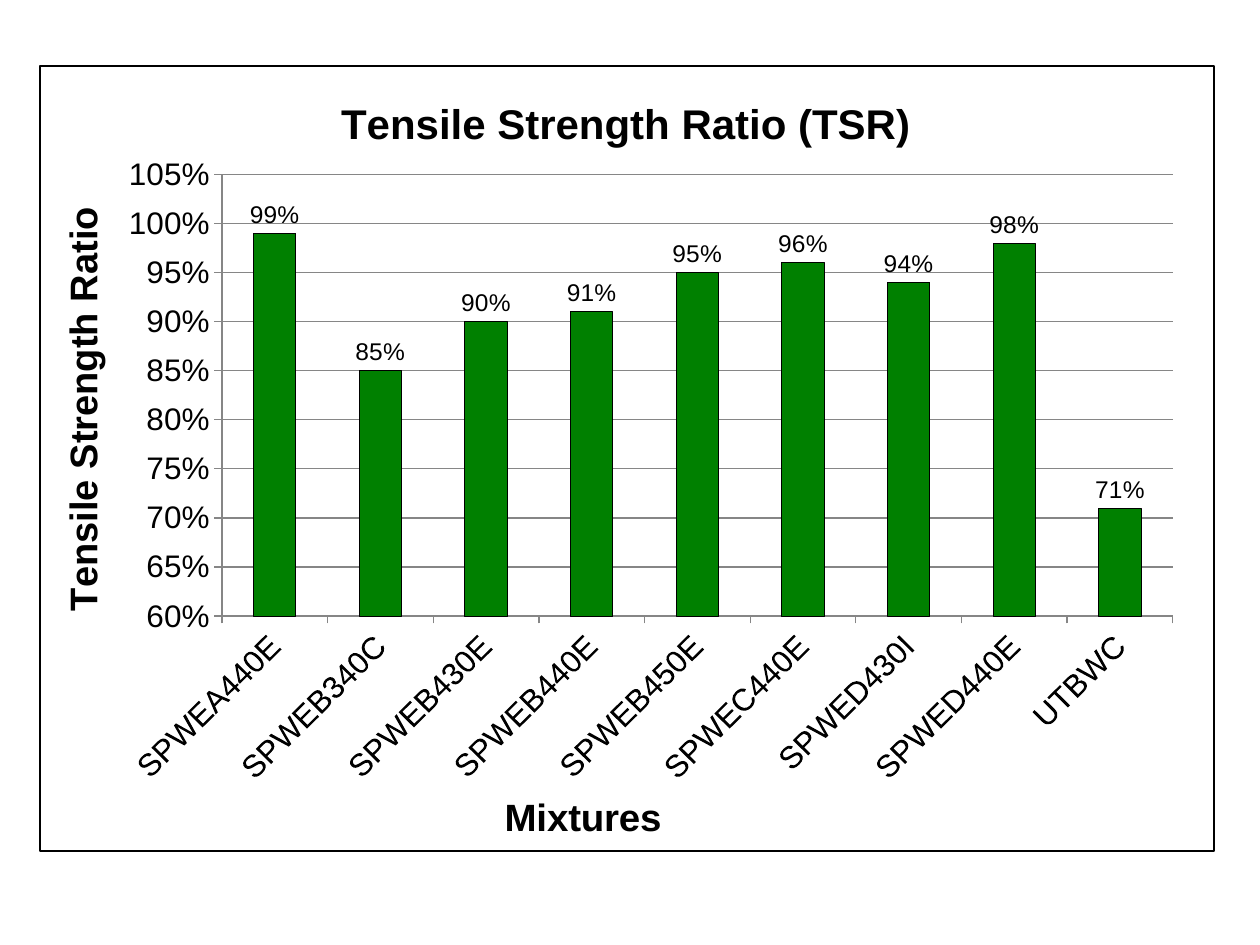
from dataclasses import dataclass

from lxml.etree import SubElement
from pptx import Presentation
from pptx.chart.data import CategoryChartData
from pptx.dml.color import RGBColor
from pptx.enum.chart import XL_CHART_TYPE as ChartType
from pptx.enum.chart import XL_LABEL_POSITION as LabelPosition
from pptx.enum.chart import XL_TICK_MARK as TickMark
from pptx.enum.shapes import MSO_SHAPE as ShapeType
from pptx.oxml import parse_xml
from pptx.oxml.ns import nsdecls, qn
from pptx.util import Pt

PX = 914400 / 126
FRAME = (40, 66, 1174, 785)
BLACK, WHITE, GREEN, GRAY = "000000", "FFFFFF", "008000", "868686"
MIXTURES = {
    "SPWEA440E": 0.99,
    "SPWEB340C": 0.85,
    "SPWEB430E": 0.90,
    "SPWEB440E": 0.91,
    "SPWEB450E": 0.95,
    "SPWEC440E": 0.96,
    "SPWED430I": 0.94,
    "SPWED440E": 0.98,
    "UTBWC": 0.71,
}


@dataclass
class Caption:
    text: str
    size: int
    x: float
    y: float
    degrees: int = 0


CHART_CAPTION = Caption("Tensile Strength Ratio (TSR)", 24, 0.25, 0.03)
MIXTURE_CAPTION = Caption("Mixtures", 22, 0.39, 0.93)
RATIO_CAPTION = Caption("Tensile Strength Ratio", 22, 0.01, 0.18, -90)


def color(value: str) -> RGBColor:
    return RGBColor.from_string(value)


def px(length: int) -> int:
    return round(length * PX)


def style_font(font, size: int, bold: bool = False) -> None:
    font.name = "Arial"
    font.size = Pt(size)
    font.bold = bold
    font.color.rgb = color(BLACK)


def style_line(line, value: str, width: float) -> None:
    line.color.rgb = color(value)
    line.width = Pt(width)


def fill_solid(fill, value: str) -> None:
    fill.solid()
    fill.fore_color.rgb = color(value)


def rotate(element, degrees: int) -> None:
    body = element.find(".//" + qn("a:bodyPr"))
    body.set("rot", str(degrees * 60000))
    body.set("vert", "horz")


def set_layout(element, **values) -> None:
    layout = element.find(qn("c:layout"))
    if layout is None:
        layout = parse_xml(f"<c:layout {nsdecls('c')}/>")
        element.insert(0, layout)
    manual = SubElement(layout, qn("c:manualLayout"))
    for name, value in values.items():
        SubElement(manual, qn(f"c:{name}")).set("val", str(value))


def write_caption(title, caption: Caption) -> None:
    title.text_frame.text = caption.text
    style_font(title.text_frame.paragraphs[0].runs[0].font, caption.size, True)
    rotate(title.element, caption.degrees)
    set_layout(title.element, xMode="edge", yMode="edge", x=caption.x, y=caption.y)


def style_axis(axis, caption: Caption) -> None:
    axis.has_title = True
    write_caption(axis.axis_title, caption)
    axis.major_tick_mark = TickMark.OUTSIDE
    axis.minor_tick_mark = TickMark.NONE
    style_line(axis.format.line, GRAY, 0.75)
    style_font(axis.tick_labels.font, 18)


def style_value_axis(axis) -> None:
    style_axis(axis, RATIO_CAPTION)
    axis.minimum_scale = 0.6
    axis.maximum_scale = 1.05
    axis.major_unit = 0.05
    axis.has_major_gridlines = True
    style_line(axis.major_gridlines.format.line, GRAY, 0.75)
    axis.tick_labels.number_format = "0%"
    axis.tick_labels.number_format_is_linked = False


def style_columns(plot) -> None:
    plot.gap_width = 150
    plot.vary_by_categories = False
    columns = plot.series[0]
    fill_solid(columns.format.fill, GREEN)
    style_line(columns.format.line, BLACK, 0.5)
    labels = columns.data_labels
    labels.show_value = True
    labels.position = LabelPosition.OUTSIDE_END
    labels.number_format = "0%"
    labels.number_format_is_linked = False
    style_font(labels.font, 14)


def add_frame(slide) -> None:
    shape = slide.shapes.add_shape(ShapeType.RECTANGLE, *map(px, FRAME))
    shape.shadow.inherit = False
    fill_solid(shape.fill, WHITE)
    style_line(shape.line, BLACK, 0.75)


def add_ratio_chart(slide) -> None:
    data = CategoryChartData(number_format="0%")
    data.categories = list(MIXTURES)
    data.add_series("Series 1", list(MIXTURES.values()))
    chart = slide.shapes.add_chart(
        ChartType.COLUMN_CLUSTERED, *map(px, FRAME), data
    ).chart
    chart.font.name = "Calibri"
    chart.font.size = Pt(10)
    chart.font.color.rgb = color(BLACK)
    chart.has_legend = False
    chart.has_title = True
    write_caption(chart.chart_title, CHART_CAPTION)
    style_axis(chart.category_axis, MIXTURE_CAPTION)
    style_value_axis(chart.value_axis)
    style_columns(chart.plots[0])
    plot_area = chart.element.find(".//" + qn("c:plotArea"))
    rotate(plot_area.find(f"{qn('c:catAx')}/{qn('c:txPr')}"), -45)
    set_layout(
        plot_area,
        layoutTarget="inner",
        xMode="edge",
        yMode="edge",
        x=0.155,
        y=0.14,
        w=0.81,
        h=0.57,
    )


def main() -> None:
    presentation = Presentation()
    presentation.slide_width, presentation.slide_height = px(1260), px(945)
    slide = presentation.slides.add_slide(presentation.slide_layouts[6])
    add_frame(slide)
    add_ratio_chart(slide)
    presentation.save("out.pptx")


if __name__ == "__main__":
    main()
